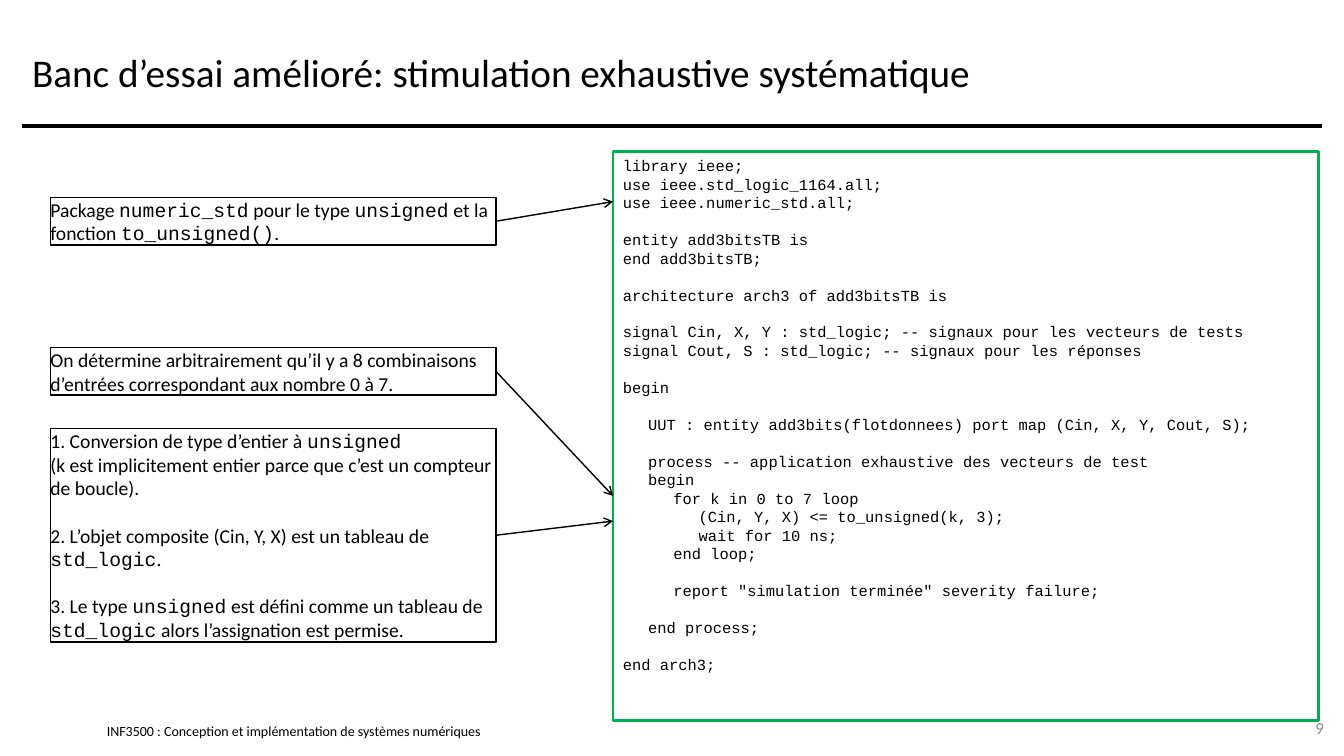
from lxml import etree
from pptx import Presentation
from pptx.dml.color import RGBColor
from pptx.enum.shapes import MSO_CONNECTOR, MSO_SHAPE
from pptx.enum.text import MSO_ANCHOR, PP_ALIGN
from pptx.oxml.ns import qn
from pptx.util import Inches, Pt

STRAIGHT = MSO_CONNECTOR.STRAIGHT
RECTANGLE = MSO_SHAPE.RECTANGLE
TOP, MIDDLE = MSO_ANCHOR.TOP, MSO_ANCHOR.MIDDLE
LEFT, RIGHT, JUSTIFY = PP_ALIGN.LEFT, PP_ALIGN.RIGHT, PP_ALIGN.JUSTIFY
SANS, MONO = "Calibri", "Courier New"
BLACK, GREEN, GREY = "000000", "00B050", "8C8C8C"
RIGHT_SIDE = 3
CODE_SIZE, CODE_PITCH, NOTE_PITCH = 11, 13.2, 17
TAB_STEP, TAB_COUNT = 0.25, 5

CODE_BLOCKS = [
    ["library ieee;", "use ieee.std_logic_1164.all;", "use ieee.numeric_std.all;"],
    ["entity add3bitsTB is", "end add3bitsTB;"],
    ["architecture arch3 of add3bitsTB is"],
    ["signal Cin, X, Y : std_logic; -- signaux pour les vecteurs de tests",
     "signal Cout, S : std_logic; -- signaux pour les réponses"],
    ["begin"],
    ["\tUUT : entity add3bits(flotdonnees) port map (Cin, X, Y, Cout, S);"],
    ["\tprocess -- application exhaustive des vecteurs de test",
     "\tbegin",
     "\t\tfor k in 0 to 7 loop",
     "\t\t\t(Cin, Y, X) <= to_unsigned(k, 3);",
     "\t\t\twait for 10 ns;",
     "\t\tend loop;"],
    ["\t\treport \"simulation terminée\" severity failure;"],
    ["\tend process;"],
    ["end arch3;"],
]

# Backticks enclose monospaced words.
NOTES = [
    (1.96, 0.47, 2.0, [
        ["Package `numeric_std` pour le type `unsigned` et la fonction `to_unsigned()`."]]),
    (3.45, 0.47, 4.92, [
        ["On détermine arbitrairement qu’il y a 8 combinaisons d’entrées "
         "correspondant aux nombre 0 à 7."]]),
    (4.25, 2.12, 5.17, [
        ["1. Conversion de type d’entier à `unsigned`",
         "(k est implicitement entier parce que c’est un compteur de boucle)."],
        ["2. L’objet composite (Cin, Y, X) est un tableau de `std_logic`."],
        ["3. Le type `unsigned` est défini comme un tableau de `std_logic` "
         "alors l’assignation est permise."]]),
]


def color(hex_code):
    return RGBColor.from_string(hex_code)


def set_font(font, size, hex_code, family=None):
    font.size = Pt(size)
    font.color.rgb = color(hex_code)
    if family:
        font.name = family


def set_frame(frame, anchor, margin_x, margin_y):
    frame.word_wrap = True
    frame.vertical_anchor = anchor
    frame.margin_left = frame.margin_right = Inches(margin_x)
    frame.margin_top = frame.margin_bottom = Inches(margin_y)


def add_label(slide, box, text, size, hex_code, align=LEFT, margin_x=0.1, margin_y=0.05):
    frame = slide.shapes.add_textbox(*map(Inches, box)).text_frame
    set_frame(frame, MIDDLE, margin_x, margin_y)
    paragraph = frame.paragraphs[0]
    paragraph.text = text
    paragraph.alignment = align
    set_font(paragraph.font, size, hex_code, SANS)


def add_line(slide, start, end, width):
    line = slide.shapes.add_connector(STRAIGHT, *map(Inches, start + end))
    line.line.color.rgb = color(BLACK)
    line.line.width = Pt(width)
    etree.SubElement(line._element.spPr, qn("a:effectLst"))
    return line


def add_frame(slide, box, hex_code, width):
    outline = slide.shapes.add_shape(RECTANGLE, *map(Inches, box))
    outline.shadow.inherit = False
    outline.fill.background()
    outline.line.color.rgb = color(hex_code)
    outline.line.width = Pt(width)
    return outline


def add_block_paragraphs(frame, blocks, gap):
    for block_index, block in enumerate(blocks):
        for line_index, text in enumerate(block):
            first = block_index == line_index == 0
            paragraph = frame.paragraphs[0] if first else frame.add_paragraph()
            if block_index and not line_index:
                paragraph.space_before = Pt(gap)
            yield paragraph, text


def add_header(slide, box):
    left, top, width, height = box
    add_line(slide, (left, top + height), (left + width, top + height), 3)
    add_label(slide, box, "Banc d’essai amélioré: stimulation exhaustive systématique",
              28, BLACK)


def add_footer(slide, box):
    left, top, width, height = box
    add_label(slide, (left, top + 0.15, 5.11, 0.17),
              "INF3500 : Conception et implémentation de systèmes numériques",
              10, BLACK, margin_x=0, margin_y=0)
    add_label(slide, (left + width - 0.67, top, 0.67, height), "9", 12, GREY, RIGHT)


def add_code_panel(slide, box):
    panel = add_frame(slide, box, GREEN, 2)
    set_frame(panel.text_frame, TOP, 0.1, 0.05)
    for paragraph, text in add_block_paragraphs(panel.text_frame, CODE_BLOCKS, CODE_PITCH):
        paragraph.text = text
        paragraph.alignment = JUSTIFY
        paragraph.line_spacing = Pt(CODE_PITCH)
        stops = etree.SubElement(paragraph._p.get_or_add_pPr(), qn("a:tabLst"))
        for stop in range(1, TAB_COUNT + 1):
            etree.SubElement(stops, qn("a:tab"), pos=str(Inches(stop * TAB_STEP)), algn="l")
        set_font(paragraph.font, CODE_SIZE, BLACK, MONO)


def add_note(slide, box, blocks, target):
    note = add_frame(slide, box, BLACK, 1)
    set_frame(note.text_frame, MIDDLE, 0, 0)
    for paragraph, text in add_block_paragraphs(note.text_frame, blocks, NOTE_PITCH):
        paragraph.alignment = LEFT
        set_font(paragraph.font, 14, BLACK)
        for index, words in enumerate(text.split("`")):
            if words:
                run = paragraph.add_run()
                run.text = words
                run.font.name = MONO if index % 2 else SANS
    left, top, width, height = box
    arrow = add_line(slide, (left + width, top + height / 2), target, 1)
    arrow.begin_connect(note, RIGHT_SIDE)
    etree.SubElement(arrow.line._get_or_add_ln(), qn("a:tailEnd"), type="arrow")


def main():
    deck = Presentation()
    deck.slide_width, deck.slide_height = Inches(13.33), Inches(7.5)
    slide = deck.slides.add_slide(deck.slide_layouts[6])
    code_left = 6.08
    add_footer(slide, (1.06, 7.02, 12.17, 0.4))
    add_header(slide, (0.22, 0.17, 12.89, 1.08))
    add_code_panel(slide, (code_left, 1.5, 7, 5.65))
    for top, height, target_y, blocks in NOTES:
        add_note(slide, (0.5, top, 4.42, height), blocks, (code_left, target_y))
    deck.save("out.pptx")


if __name__ == "__main__":
    main()
